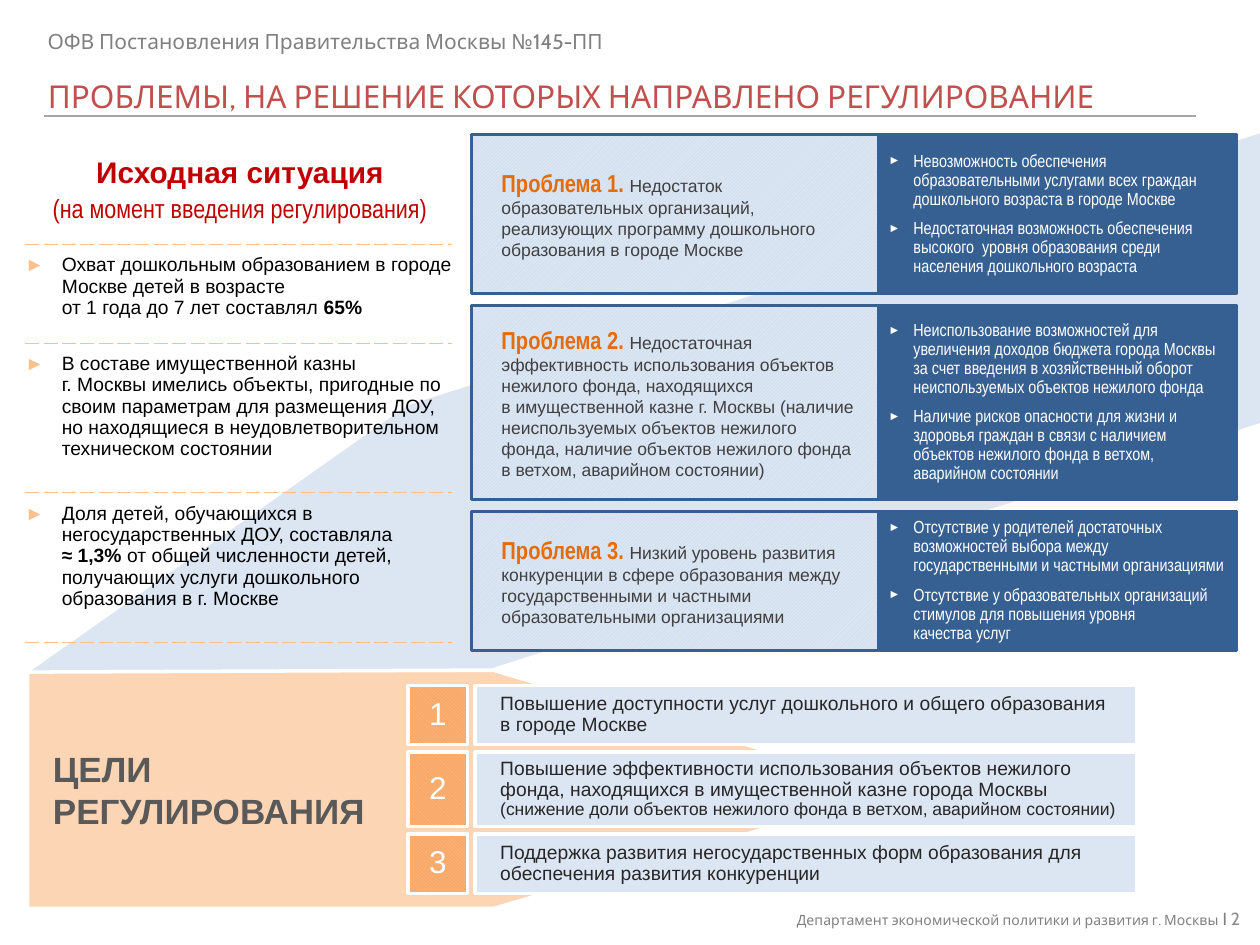
"""Builds the slide on the problems and goals of preschool regulation in Moscow."""
from lxml import etree
from pptx import Presentation
from pptx.dml.color import RGBColor
from pptx.enum.dml import MSO_PATTERN_TYPE
from pptx.enum.shapes import MSO_CONNECTOR, MSO_SHAPE
from pptx.enum.text import MSO_ANCHOR, PP_ALIGN
from pptx.oxml import parse_xml
from pptx.oxml.ns import nsdecls, qn
from pptx.util import Inches, Pt

PLATE, RECTANGLE = MSO_SHAPE.PENTAGON, MSO_SHAPE.RECTANGLE
LIGHT_UP = MSO_PATTERN_TYPE.LIGHT_UPWARD_DIAGONAL
DARK_UP = MSO_PATTERN_TYPE.DARK_UPWARD_DIAGONAL
LIGHT_DOWN = MSO_PATTERN_TYPE.LIGHT_DOWNWARD_DIAGONAL
TOP, MIDDLE = MSO_ANCHOR.TOP, MSO_ANCHOR.MIDDLE
LEFT, CENTER, RIGHT = PP_ALIGN.LEFT, PP_ALIGN.CENTER, PP_ALIGN.RIGHT

WHITE = RGBColor(0xFF, 0xFF, 0xFF)
BLACK = RGBColor(0, 0, 0)
INK = RGBColor(0x26, 0x26, 0x26)
DARK_GRAY = RGBColor(0x40, 0x40, 0x40)
GOAL_GRAY = RGBColor(0x59, 0x59, 0x59)
GRAY = RGBColor(0x80, 0x80, 0x80)
NUMBER_GRAY = RGBColor(0x8C, 0x8C, 0x8C)
RULE_GRAY = RGBColor(0xA6, 0xA6, 0xA6)
TITLE_RED = RGBColor(0xC0, 0x50, 0x4D)
RED = RGBColor(0xC0, 0, 0)
ORANGE = RGBColor(0xE4, 0x6C, 0x0A)
NUMBER_ORANGE = RGBColor(0xF9, 0xA9, 0x67)
LIGHT_ORANGE = RGBColor(0xFA, 0xC0, 0x90)
PEACH = RGBColor(0xFC, 0xD5, 0xB5)
BLUE = RGBColor(0x37, 0x60, 0x92)
HATCH_BLUE = RGBColor(0xC0, 0xD5, 0xEE)
PALE_BLUE = RGBColor(0xDC, 0xE6, 0xF2)

presentation = Presentation()
presentation.slide_width, presentation.slide_height = Inches(10), Inches(7.5)
COLUMN = presentation.slide_width / 100
ROW = presentation.slide_height / 75
slide = presentation.slides.add_slide(presentation.slide_layouts[5])
shapes = slide.shapes


def add_box(kind, left, top, width, height, fill=None, line=None, weight=2,
            hatch=None, insets=(1, 0.5, 1, 0.5), anchor=MIDDLE):
    place = [round(value) for value in
             (left * COLUMN, top * ROW, width * COLUMN, height * ROW)]
    if kind is None:
        shape = shapes.add_textbox(*place)
    else:
        shape = shapes.add_shape(kind, *place)
        shape.shadow.inherit = False
        shape.line.color.rgb = line
        shape.line.width = Pt(weight)
        if hatch:
            pattern, foreground = hatch
            shape.fill.patterned()
            shape.fill.pattern = pattern
            shape.fill.fore_color.rgb = foreground
            shape.fill.back_color.rgb = fill
        else:
            shape.fill.solid()
            shape.fill.fore_color.rgb = fill
    frame = shape.text_frame
    frame.word_wrap = True
    frame.vertical_anchor = anchor
    frame.margin_left, frame.margin_right = (round(insets[i] * COLUMN) for i in (0, 2))
    frame.margin_top, frame.margin_bottom = (round(insets[i] * ROW) for i in (1, 3))
    return shape


def write(paragraph, text, size=11, font="Arial", color=BLACK, bold=False, align=LEFT,
          spacing=None, before=0, after=0, bullet=None, bullet_scale=100, indent=0):
    paragraph.alignment = align
    if spacing:
        paragraph.line_spacing = spacing
    paragraph.space_before, paragraph.space_after = Pt(before), Pt(after)
    if bullet:
        properties = paragraph._p.get_or_add_pPr()
        properties.set("marL", str(round(indent * COLUMN)))
        properties.set("indent", str(round(-indent * COLUMN)))
        color_element = etree.SubElement(properties, qn("a:buClr"))
        etree.SubElement(color_element, qn("a:srgbClr"), val=str(bullet))
        etree.SubElement(properties, qn("a:buSzPct"), val=str(bullet_scale * 1000))
        etree.SubElement(properties, qn("a:buFont"), typeface="Arial")
        etree.SubElement(properties, qn("a:buChar"), char="►")
    for index, line in enumerate(text.split("\n")):
        if index:
            paragraph.add_line_break()
        if line:
            run = paragraph.add_run()
            run.text = line
            run.font.size, run.font.name, run.font.bold = Pt(size), font, bold
            run.font.color.rgb = color


goal_plate = add_box(PLATE, 2.2, 53.2, 69.1, 18.9, PEACH, WHITE, insets=(2, 0.4, 1.6, 0.4))
goal_plate.adjustments[0] = 1.7
write(goal_plate.text_frame.paragraphs[0], "ЦЕЛИ\nРЕГУЛИРОВАНИЯ",
      size=20, color=GOAL_GRAY, bold=True)
arrow = add_box(PLATE, -0.5, 25.9, 107.5, 22.2, PALE_BLUE, WHITE)
arrow.adjustments[0] = 1.59
arrow.rotation = 162.3

title = shapes.title
title.left, title.top = round(2.8 * COLUMN), round(5.6 * ROW)
title.width, title.height = round(94.5 * COLUMN), round(4 * ROW)
title.text_frame.vertical_anchor = TOP
title.text_frame.word_wrap = True
write(title.text_frame.paragraphs[0],
      "ПРОБЛЕМЫ, НА РЕШЕНИЕ КОТОРЫХ НАПРАВЛЕНО РЕГУЛИРОВАНИЕ",
      size=18, font="Cabin", color=TITLE_RED)
rule = shapes.add_connector(MSO_CONNECTOR.STRAIGHT, round(3.5 * COLUMN), round(9.2 * ROW),
                            round(94.9 * COLUMN), round(9.2 * ROW))
rule.line.color.rgb = RULE_GRAY
rule.line.width = Pt(1.5)
etree.SubElement(rule._element.spPr, qn("a:effectLst"))

footer = add_box(None, 50.2, 72.1, 49.2, 1.6).text_frame.paragraphs[0]
for text, size, color in (("Департамент экономической политики и развития г. Москвы ", 8, GRAY),
                          ("I ", 10, GRAY), ("2", 10, NUMBER_GRAY)):
    write(footer, text, size=size, font="Cabin", color=color, align=RIGHT)
header = add_box(None, 2.8, 1.8, 72.4, 3, anchor=TOP)
write(header.text_frame.paragraphs[0], "ОФВ Постановления Правительства Москвы №145-ПП",
      size=12, font="Cabin", color=GRAY)

problems = [
    (12.6, LIGHT_UP,
     "Недостаток образовательных организаций, реализующих программу дошкольного "
     "образования в городе Москве",
     ["Невозможность обеспечения образовательными услугами всех граждан дошкольного "
      "возраста в городе Москве",
      "Недостаточная возможность обеспечения высокого  уровня образования среди "
      "населения дошкольного возраста"]),
    (15.4, DARK_UP,
     "Недостаточная эффективность использования объектов нежилого фонда, находящихся\n"
     "в имущественной казне г. Москвы (наличие неиспользуемых объектов нежилого фонда, "
     "наличие объектов нежилого фонда в ветхом, аварийном состоянии)",
     ["Неиспользование возможностей для увеличения доходов бюджета города Москвы за счет "
      "введения в хозяйственный оборот неиспользуемых объектов нежилого фонда",
      "Наличие рисков опасности для жизни и здоровья граждан в связи с наличием объектов "
      "нежилого фонда в ветхом, аварийном состоянии"]),
    (11, DARK_UP,
     "Низкий уровень развития конкуренции в сфере образования между государственными и "
     "частными образовательными организациями",
     ["Отсутствие у родителей достаточных возможностей выбора между государственными и "
      "частными организациями",
      "Отсутствие у образовательных организаций стимулов для повышения уровня\n"
      "качества услуг"]),
]
top = 10.7
for number, (height, pattern, problem, effects) in enumerate(problems, 1):
    frame = add_box(RECTANGLE, 69.7, top, 28.4, height, BLUE, BLUE, 1.75,
                    insets=(0.8, 0.5, 0.8, 0.5)).text_frame
    for index, effect in enumerate(effects):
        write(frame.add_paragraph() if index else frame.paragraphs[0], effect, size=10,
              font="Arial Narrow", color=WHITE, spacing=0.9, after=6,
              bullet=WHITE, bullet_scale=70, indent=2)
    panel = add_box(PLATE, 37.4, top, 32.3, height, PALE_BLUE, BLUE, 1.75,
                    (pattern, HATCH_BLUE), (2.4, 0.8, 1.6, 0.8))
    panel.adjustments[0] = 0
    paragraph = panel.text_frame.paragraphs[0]
    write(paragraph, f"Проблема {number}. ", size=14, font="Arial Narrow",
          color=ORANGE, bold=True)
    write(paragraph, problem, size=10, color=DARK_GRAY)
    top += height + 0.95

situation = [
    (7.8, 0, [("Охват дошкольным образованием в городе Москве детей в возрасте\n"
               "от 1 года до 7 лет составлял ", False), ("65%", True)]),
    (11.9, 5, [("В составе имущественной казны\nг. Москвы имелись объекты, пригодные по своим "
                "параметрам для размещения ДОУ, но находящиеся в неудовлетворительном "
                "техническом состоянии", False)]),
    (11.9, 5, [("Доля детей, обучающихся в негосударственных ДОУ, составляла\n", False),
               ("≈ 1,3% ", True),
               ("от общей численности детей, получающих услуги дошкольного образования "
                "в г. Москве", False)]),
]
table = shapes.add_table(len(situation), 1, round(2 * COLUMN), round(19.4 * ROW),
                         round(33.9 * COLUMN), round(31.6 * ROW)).table
table.first_row = table.horz_banding = False
for index, (height, gap, runs) in enumerate(situation):
    table.rows[index].height = round(height * ROW)
    cell = table.cell(index, 0)
    cell.margin_left = cell.margin_right = 0
    cell.margin_top = cell.margin_bottom = round(0.8 * ROW)
    dash = f'<a:solidFill><a:srgbClr val="{LIGHT_ORANGE}"/></a:solidFill><a:prstDash val="dash"/>'
    for side, stroke in zip("LRTB", ["<a:noFill/>"] * 2 + [dash] * 2):
        cell._tc.get_or_add_tcPr().append(parse_xml(
            f'<a:ln{side} {nsdecls("a")} w="3175">{stroke}</a:ln{side}>'))
    cell.fill.background()
    for order, (text, bold) in enumerate(runs):
        write(cell.text_frame.paragraphs[0], text, bold=bold, before=gap, after=gap,
              bullet=None if order else LIGHT_ORANGE, indent=2.9)

heading = add_box(None, 2.2, 10.7, 33.7, 8.7, insets=(0.8, 1.6, 0.8, 2)).text_frame.paragraphs[0]
write(heading, "Исходная ситуация\n", size=17, color=RED, bold=True, align=CENTER, spacing=1.1)
write(heading, "(на момент введения регулирования)", size=15, font="Arial Narrow",
      color=RED, align=CENTER, spacing=1.1)

goals = [
    (4.7, [("Повышение доступности услуг дошкольного и общего образования\nв городе Москве", 11)]),
    (5.9, [("Повышение эффективности использования объектов нежилого фонда, находящихся в "
            "имущественной казне города Москвы ", 11),
           ("(снижение доли объектов нежилого фонда в ветхом, аварийном состоянии)", 10)]),
    (4.7, [("Поддержка развития негосударственных форм образования для обеспечения развития "
            "конкуренции", 11)]),
]
top = 54.4
for number, (height, runs) in enumerate(goals, 1):
    bar = add_box(RECTANGLE, 37.7, top, 52.5, height, PALE_BLUE, WHITE, insets=(2, 0.4, 0.8, 0.4))
    for text, size in runs:
        write(bar.text_frame.paragraphs[0], text, size=size, color=INK, spacing=0.9)
    badge = add_box(RECTANGLE, 32.4, top, 4.7, height, NUMBER_ORANGE, WHITE,
                    hatch=(LIGHT_DOWN, LIGHT_ORANGE), insets=(0.1, 0.1, 0.1, 0.1))
    write(badge.text_frame.paragraphs[0], str(number), size=18, color=WHITE,
          align=CENTER, spacing=0.9)
    top += height + 0.6

presentation.save("out.pptx")
